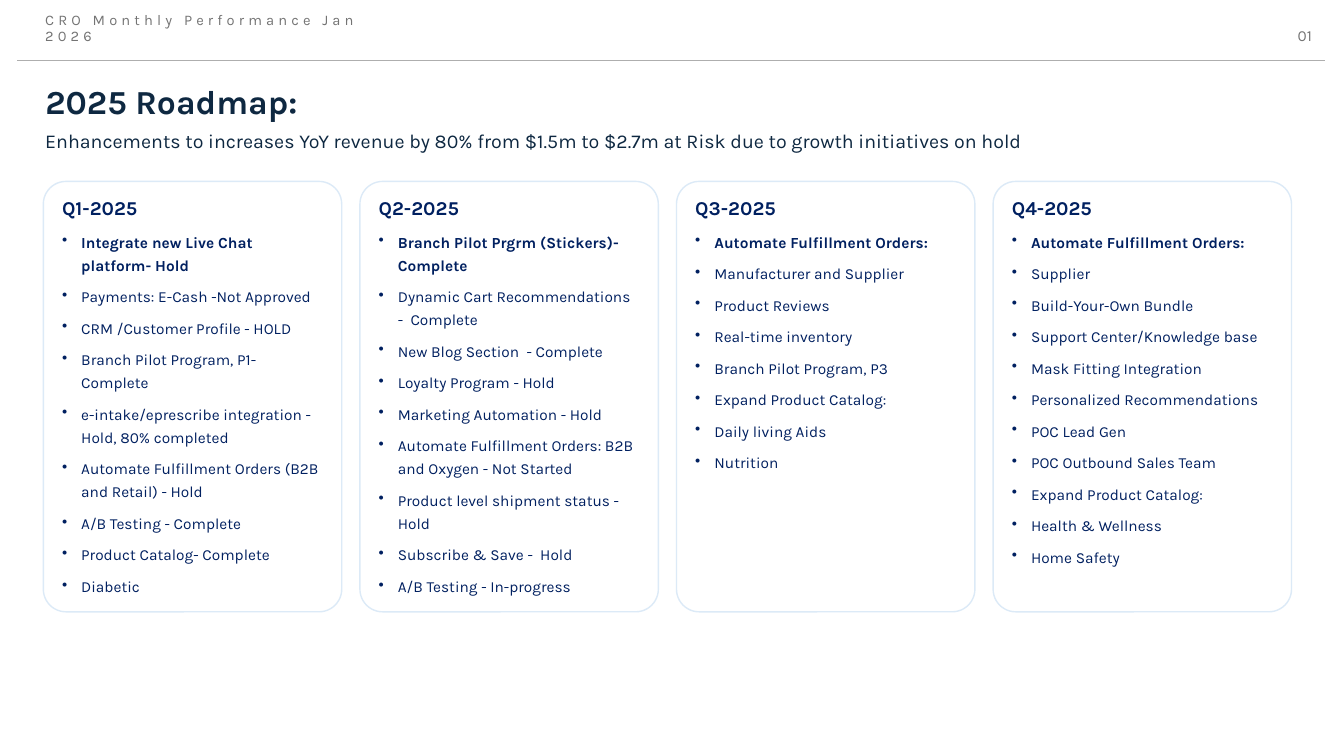
from lxml import etree
from pptx import Presentation
from pptx.dml.color import RGBColor
from pptx.enum.shapes import MSO_CONNECTOR, MSO_SHAPE
from pptx.enum.text import MSO_ANCHOR, MSO_AUTO_SIZE, PP_ALIGN
from pptx.oxml.ns import qn
from pptx.util import Inches, Pt

ROUND, STRAIGHT = MSO_SHAPE.ROUNDED_RECTANGLE, MSO_CONNECTOR.STRAIGHT
TOP, BOTTOM = MSO_ANCHOR.TOP, MSO_ANCHOR.BOTTOM
LEFT, RIGHT = PP_ALIGN.LEFT, PP_ALIGN.RIGHT

# Content
HEADER = "CRO Monthly Performance Jan 2026"
PAGE = "01"
TITLE = "2025 Roadmap:"
SUBTITLE = ("Enhancements to increases YoY revenue by 80% from $1.5m to $2.7m "
            "at Risk due to growth initiatives on hold")
QUARTERS = {
    "Q1-2025": [
        "Integrate new Live Chat platform- Hold",
        "Payments: E-Cash -Not Approved",
        "CRM /Customer Profile - HOLD",
        "Branch Pilot Program, P1- Complete",
        "e-intake/eprescribe integration - Hold, 80% completed",
        "Automate Fulfillment Orders (B2B and Retail) - Hold",
        "A/B Testing - Complete",
        "Product Catalog- Complete",
        "Diabetic",
    ],
    "Q2-2025": [
        "Branch Pilot Prgrm (Stickers)- Complete",
        "Dynamic Cart Recommendations -  Complete",
        "New Blog Section  - Complete",
        "Loyalty Program - Hold",
        "Marketing Automation - Hold",
        "Automate Fulfillment Orders: B2B and Oxygen - Not Started",
        "Product level shipment status - Hold",
        "Subscribe & Save -  Hold",
        "A/B Testing - In-progress",
    ],
    "Q3-2025": [
        "Automate Fulfillment Orders:",
        "Manufacturer and Supplier",
        "Product Reviews",
        "Real-time inventory",
        "Branch Pilot Program, P3",
        "Expand Product Catalog:",
        "Daily living Aids",
        "Nutrition",
    ],
    "Q4-2025": [
        "Automate Fulfillment Orders:",
        "Supplier",
        "Build-Your-Own Bundle",
        "Support Center/Knowledge base",
        "Mask Fitting Integration",
        "Personalized Recommendations",
        "POC Lead Gen",
        "POC Outbound Sales Team",
        "Expand Product Catalog:",
        "Health & Wellness",
        "Home Safety",
    ],
}

# Style and grid (inches)
COLORS = {"ink": "0E2841", "navy": "002060", "grey": "747474",
          "rule": "AEAEAE", "border": "DCEAF7", "white": "FFFFFF"}
FONT = "Karla"
CARD_LEFT, CARD_TOP, CARD_W, CARD_H, CARD_GAP = 0.43, 1.8, 2.96, 4.27, 0.18
TEXT_LEFT, TEXT_W = 0.35, 12.35
HEADER_TOP, HEADER_H, RULE_Y = 0.22, 0.27, 0.6
INDENT = Inches(0.19)


def rgb(name):
    return RGBColor.from_string(COLORS[name])


def apply(obj, values):
    for name, value in values.items():
        setattr(obj, name, value)


def write(p, text, size, color, bold=False, **layout):
    apply(p, layout)
    r = p.add_run()
    r.text = text
    apply(r.font, {"name": FONT, "size": Pt(size), "bold": bold})
    r.font.color.rgb = rgb(color)
    return r


def add_bullet(p):
    pPr = p._p.get_or_add_pPr()
    pPr.set("marL", str(INDENT))
    pPr.set("indent", str(-INDENT))
    etree.SubElement(pPr, qn("a:buChar")).set("char", "•")


def add_label(box, text, size, color, anchor=BOTTOM, **layout):
    sp = slide.shapes.add_textbox(*map(Inches, box))
    apply(sp.text_frame, {"word_wrap": True, "vertical_anchor": anchor})
    return write(sp.text_frame.paragraphs[0], text, size, color, **layout)


def add_card(col, quarter, items):
    left = CARD_LEFT + col * (CARD_W + CARD_GAP)
    sp = slide.shapes.add_shape(ROUND, *map(Inches, (left, CARD_TOP, CARD_W, CARD_H)))
    sp.adjustments[0] = 0.076
    sp.shadow.inherit = False
    sp.fill.solid()
    sp.fill.fore_color.rgb = rgb("white")
    sp.line.color.rgb = rgb("border")
    sp.line.width = Pt(1)
    tf = sp.text_frame
    apply(tf, {"word_wrap": True, "vertical_anchor": TOP,
               "margin_left": Inches(0.12), "margin_right": Inches(0.12),
               "margin_top": Inches(0.08), "margin_bottom": 0})
    write(tf.paragraphs[0], quarter, 14, "navy", True,
          alignment=LEFT, space_after=Pt(3))
    for i, item in enumerate(items):
        p = tf.add_paragraph()
        add_bullet(p)
        write(p, item, 11, "navy", i == 0, alignment=LEFT, line_spacing=1.25,
              space_before=Pt(3), space_after=Pt(3))


prs = Presentation()
prs.slide_width, prs.slide_height = Inches(13.33), Inches(7.5)
slide = prs.slides.add_slide(prs.slide_layouts[5])

# Header strip
header = add_label((TEXT_LEFT, HEADER_TOP, 3.84, HEADER_H), HEADER, 10.5, "grey",
                   line_spacing=0.9)
header.font._element.set("spc", "300")
add_label((12.7, HEADER_TOP, 0.41, HEADER_H), PAGE, 11, "grey",
          line_spacing=0.9, alignment=RIGHT)
rule = slide.shapes.add_connector(
    STRAIGHT, *map(Inches, (0.17, RULE_Y, 13.14, RULE_Y)))
rule.line.color.rgb = rgb("rule")
rule.line.width = Pt(0.75)
etree.SubElement(rule._element.spPr, qn("a:effectLst"))

# Title and subtitle
title = slide.shapes.title
apply(title, {"left": Inches(TEXT_LEFT), "top": Inches(0.82),
              "width": Inches(TEXT_W), "height": Inches(0.44)})
apply(title.text_frame, {"auto_size": MSO_AUTO_SIZE.NONE, "word_wrap": True,
                         "vertical_anchor": BOTTOM})
write(title.text_frame.paragraphs[0], TITLE, 24, "ink", True,
      alignment=LEFT, line_spacing=0.9)
add_label((TEXT_LEFT, 1.23, TEXT_W, 0.34), SUBTITLE, 14, "ink", TOP)

# Quarter cards
for col, (quarter, items) in enumerate(QUARTERS.items()):
    add_card(col, quarter, items)

prs.save("out.pptx")
